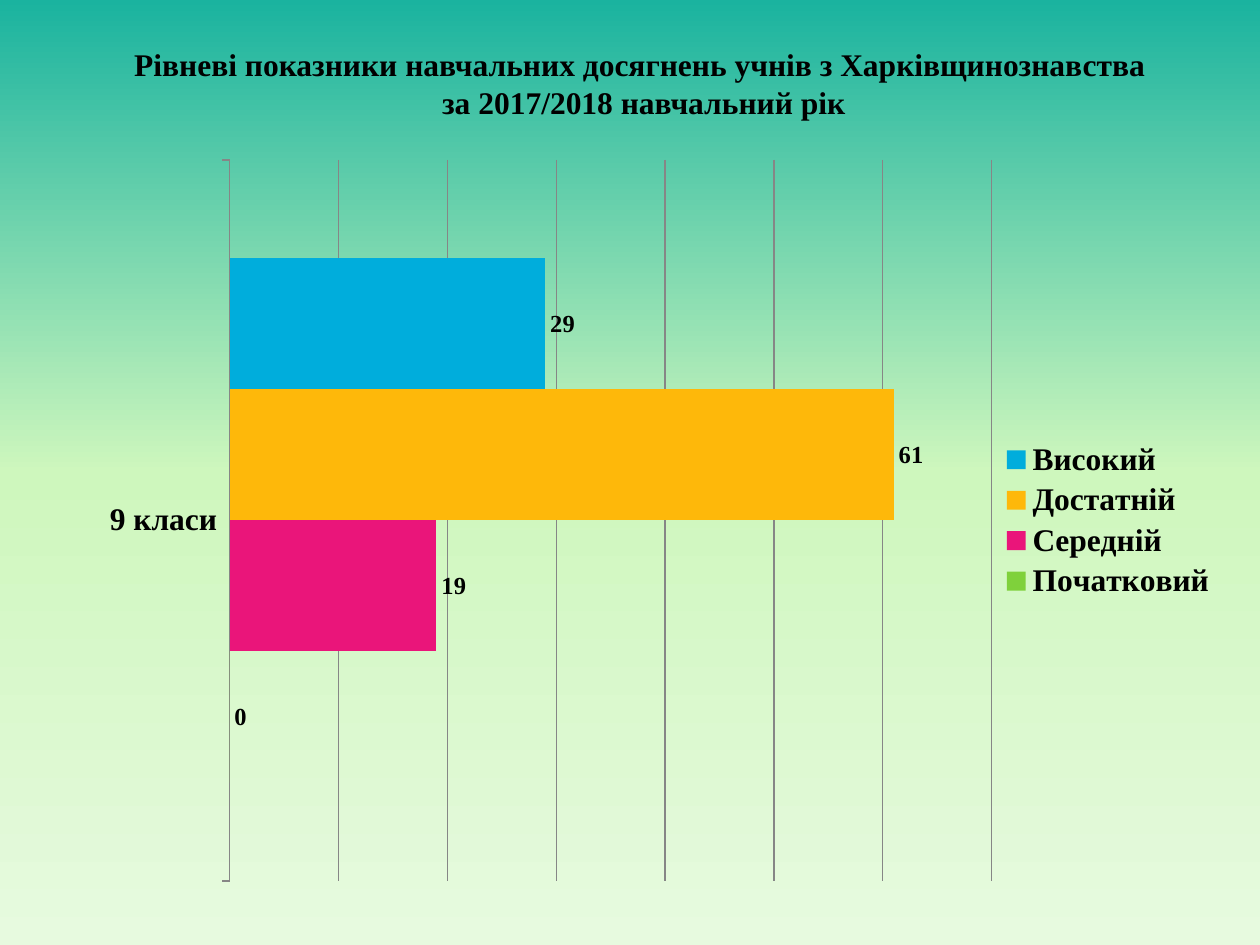
import copy

import pptx
import pptx.chart.data
import pptx.dml.color
import pptx.enum.chart
import pptx.enum.text
import pptx.oxml
import pptx.oxml.ns
import pptx.util

SCALE = 914400 / 126
FACE = "Times New Roman"
GREY = "868686"
STOPS = [(0, "1AB39F"), (0.5, "CEF7BD"), (1, "E7FADF")]
LEVELS = [
    ("Початковий", 0, "7FD13B"),
    ("Середній", 19, "EA157A"),
    ("Достатній", 61, "FEB80A"),
    ("Високий", 29, "00ADDC"),
]
PLOT = {"x": 0.16, "y": 0.03, "w": 0.64, "h": 0.94}


def px(count):
    """Turn pixels into EMU."""
    return pptx.util.Emu(round(count * SCALE))


def color(code):
    """Turn a hex string into a colour."""
    return pptx.dml.color.RGBColor.from_string(code)


def style(font, size=18, bold=True, face=FACE, ink="000000"):
    """Set the look of a font."""
    font.size = pptx.util.Pt(size)
    font.bold = bold
    font.name = face
    font.color.rgb = color(ink)


def write(slide, text, box, **look):
    """Add a centred text box."""
    frame = slide.shapes.add_textbox(*map(px, box)).text_frame
    frame.word_wrap = True
    frame.vertical_anchor = pptx.enum.text.MSO_ANCHOR.MIDDLE
    para = frame.paragraphs[0]
    para.text = text
    para.alignment = pptx.enum.text.PP_ALIGN.CENTER
    for run in para.runs:
        style(run.font, **look)


def paint(slide):
    """Fill the background with a vertical gradient."""
    fill = slide.background.fill
    fill.gradient()
    fill.gradient_angle = 270
    stops = next(slide.element.iter(pptx.oxml.ns.qn("a:gsLst")))
    stops.append(copy.deepcopy(stops[-1]))
    for stop, (place, code) in zip(fill.gradient_stops, STOPS):
        stop.position = place
        stop.color.rgb = color(code)


def rule(line):
    """Draw a thin grey chart line."""
    line.color.rgb = color(GREY)
    line.width = pptx.util.Pt(0.75)


def place(chart):
    """Fix the inner plot area within the chart."""
    area = chart.element.chart.plotArea
    for old in area.findall(pptx.oxml.ns.qn("c:layout")):
        area.remove(old)
    modes = "".join(f'<c:{key}Mode val="edge"/>' for key in "xy")
    sizes = "".join(f'<c:{key} val="{part}"/>' for key, part in PLOT.items())
    area.insert(0, pptx.oxml.parse_xml(
        f'<c:layout {pptx.oxml.ns.nsdecls("c")}><c:manualLayout>'
        f'<c:layoutTarget val="inner"/>{modes}{sizes}'
        '</c:manualLayout></c:layout>'))


def label(series, code):
    """Colour a series and show its values."""
    series.format.fill.solid()
    series.format.fill.fore_color.rgb = color(code)
    series.invert_if_negative = False
    marks = series.data_labels
    marks.show_value = True
    marks.position = pptx.enum.chart.XL_LABEL_POSITION.OUTSIDE_END
    style(marks.font, size=14)


def graph(slide, box):
    """Add the bar chart of levels."""
    data = pptx.chart.data.CategoryChartData()
    data.categories = ["9 класи"]
    for name, value, _ in LEVELS:
        data.add_series(name, [value])
    kind = pptx.enum.chart.XL_CHART_TYPE.BAR_CLUSTERED
    chart = slide.shapes.add_chart(kind, *map(px, box), data).chart
    style(chart.font, bold=False, face="Calibri")
    chart.has_title = False
    plot = chart.plots[0]
    plot.gap_width = 150
    plot.vary_by_categories = False
    for series, (_, _, code) in zip(plot.series, LEVELS):
        label(series, code)
    cats = chart.category_axis
    cats.major_tick_mark = pptx.enum.chart.XL_TICK_MARK.OUTSIDE
    style(cats.tick_labels.font)
    rule(cats.format.line)
    scale = chart.value_axis
    scale.minimum_scale, scale.maximum_scale, scale.major_unit = 0, 70, 10
    scale.has_major_gridlines = True
    rule(scale.major_gridlines.format.line)
    scale.visible = False
    chart.has_legend = True
    chart.legend.position = pptx.enum.chart.XL_LEGEND_POSITION.RIGHT
    chart.legend.include_in_layout = False
    style(chart.legend.font)
    place(chart)


def main():
    """Build the slide and save it."""
    deck = pptx.Presentation()
    deck.slide_width, deck.slide_height = px(1260), px(945)
    slide = deck.slides.add_slide(deck.slide_layouts[6])
    paint(slide)
    write(slide, "Рівневі показники навчальних досягнень учнів з Харківщинознавства\n"
          " за 2017/2018 навчальний рік", (59, 29, 1162, 108), size=18)
    graph(slide, (39, 137, 1191, 767))
    deck.save("out.pptx")


if __name__ == "__main__":
    main()
